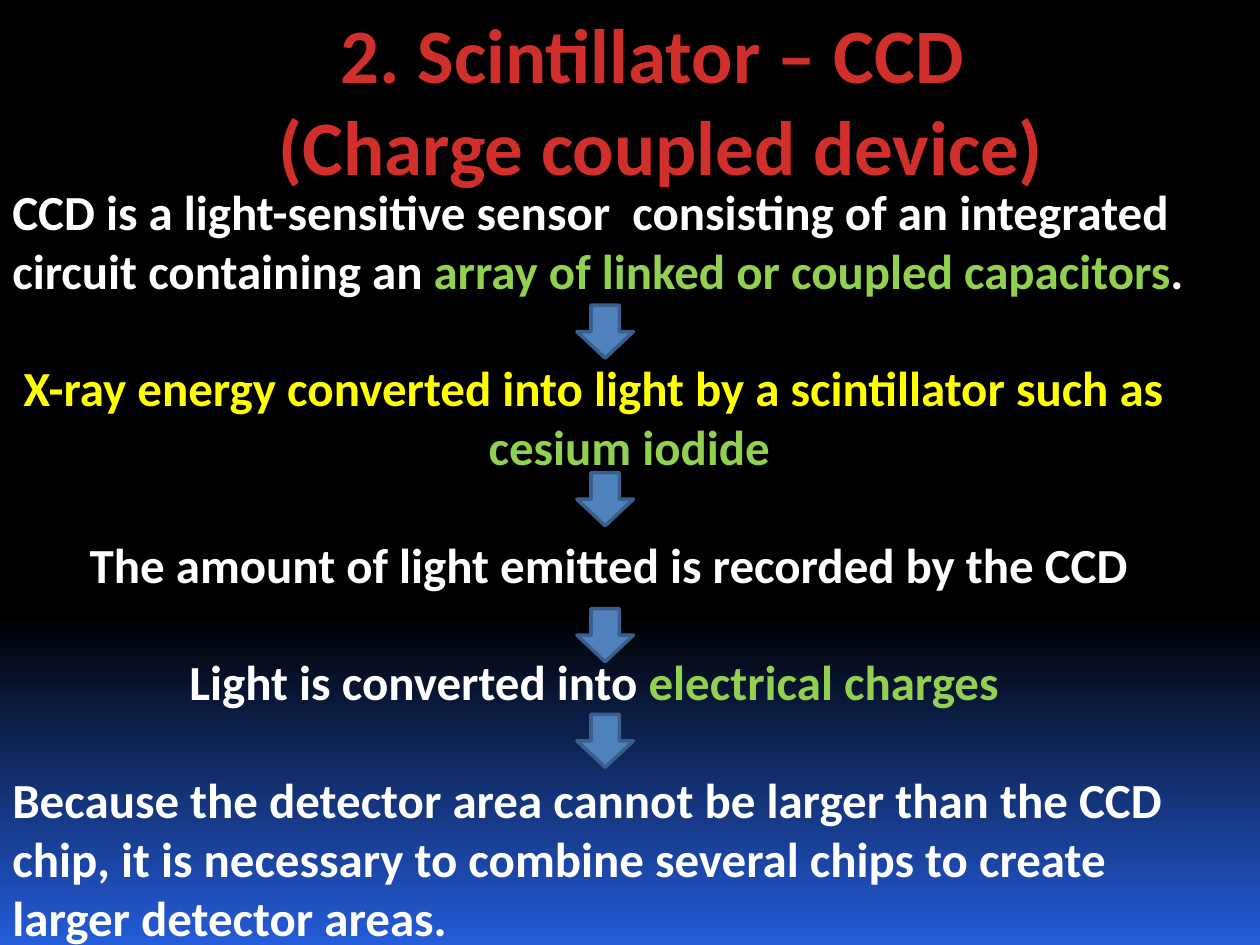
import collections

import pptx
import pptx.dml.color
import pptx.enum.shapes
import pptx.enum.text
import pptx.util

Cm = pptx.util.Cm
Pt = pptx.util.Pt
RGBColor = pptx.dml.color.RGBColor
ALIGN = pptx.enum.text.PP_ALIGN

BLACK = RGBColor(0x00, 0x00, 0x00)
WHITE = RGBColor(0xFF, 0xFF, 0xFF)
RED = RGBColor(0xD0, 0x2F, 0x2C)
YELLOW = RGBColor(0xFF, 0xFF, 0x00)
GREEN = RGBColor(0x92, 0xD0, 0x50)
DEEP_BLUE = RGBColor(0x24, 0x5C, 0xD9)
ARROW_FILL = RGBColor(0x4F, 0x81, 0xBD)
ARROW_LINE = RGBColor(0x3A, 0x5F, 0x8C)

FONT = "Calibri"
STEP_SIZE = 28
STEP_GAP = Pt(33.6)  # one line of step text

Box = collections.namedtuple("Box", "left top width height")

# Each step: indent in cm, whether a gap precedes it, coloured spans
STEPS = [
    (0, False, [
        ("CCD is a light-sensitive sensor  consisting of an integrated "
         "circuit containing an ", WHITE),
        ("array of linked or coupled capacitors", GREEN),
        (".", WHITE),
    ]),
    (0.22, True, [
        ("X-ray energy converted into light by a scintillator such as", YELLOW),
    ]),
    (9.6, False, [("cesium iodide", GREEN)]),
    (1.56, True, [
        ("The amount of light emitted is recorded by the CCD", WHITE),
    ]),
    (3.57, True, [
        ("Light is converted into ", WHITE),
        ("electrical charges", GREEN),
    ]),
    (0, True, [
        ("Because the detector area cannot be larger than the CCD chip, it is "
         "necessary to combine several chips to create larger detector areas.",
         WHITE),
    ]),
]
ARROW_TOPS = [6.15, 9.53, 12.27, 14.4]


def add_span(para, text, *, size, color, bold=True):
    span = para.add_run()
    span.text = text
    span.font.name = FONT
    span.font.size = Pt(size)
    span.font.bold = bold
    span.font.color.rgb = color


def add_text_frame(page, box):
    frame = page.shapes.add_textbox(*box).text_frame
    frame.word_wrap = True
    return frame


def next_paragraph(frame, index):
    return frame.add_paragraph() if index else frame.paragraphs[0]


def paint_background(page):
    fill = page.background.fill
    fill.gradient()
    fill.gradient_angle = 270
    for stop, position, color in zip(
            fill.gradient_stops, (0.65, 1), (BLACK, DEEP_BLUE)):
        stop.position = position
        stop.color.rgb = color


def add_title(page, box):
    frame = add_text_frame(page, box)
    lines = ["2. Scintillator – CCD ", "(Charge coupled device)"]
    for index, line in enumerate(lines):
        para = next_paragraph(frame, index)
        para.alignment = ALIGN.CENTER
        add_span(para, line, size=44, color=RED)


def add_steps(page, box):
    frame = add_text_frame(page, box)
    frame.margin_top = Cm(0.13) + STEP_GAP
    for index, (indent, has_gap, spans) in enumerate(STEPS):
        para = next_paragraph(frame, index)
        para.alignment = ALIGN.LEFT
        para.space_before = STEP_GAP if has_gap else Pt(0)
        para._p.get_or_add_pPr().set("indent", str(Cm(indent)))
        for text, color in spans:
            add_span(para, text, size=STEP_SIZE, color=color)


def add_down_arrow(page, box):
    arrow = page.shapes.add_shape(
        pptx.enum.shapes.MSO_SHAPE.DOWN_ARROW, *box)
    arrow.shadow.inherit = False
    arrow.fill.solid()
    arrow.fill.fore_color.rgb = ARROW_FILL
    arrow.line.color.rgb = ARROW_LINE
    arrow.line.width = Pt(2)


def main():
    deck = pptx.Presentation()
    deck.slide_width, deck.slide_height = Cm(25.4), Cm(19.05)
    page = deck.slides.add_slide(deck.slide_layouts[6])

    paint_background(page)
    add_title(page, Box(Cm(5.08), Cm(0), Cm(16.51), Cm(4.01)))
    add_steps(page, Box(Cm(0), Cm(2.34), Cm(24.97), Cm(17.02)))
    for top in ARROW_TOPS:
        add_down_arrow(page, Box(Cm(11.63), Cm(top), Cm(1.14), Cm(1.07)))

    deck.save("out.pptx")


if __name__ == "__main__":
    main()
